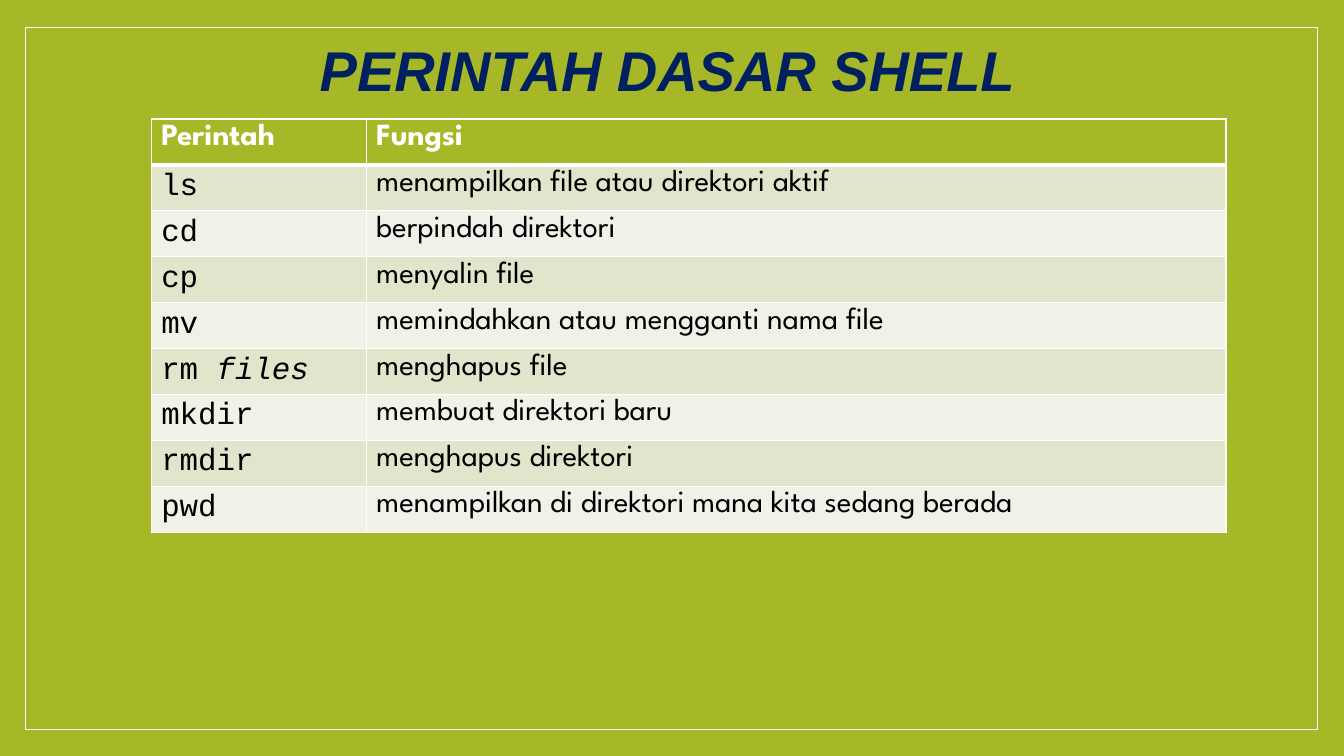
"""Build a slide that lists basic shell commands in a table."""
from dataclasses import dataclass

from lxml import etree
from pptx import Presentation
from pptx.dml.color import RGBColor
from pptx.enum.shapes import MSO_SHAPE
from pptx.enum.text import MSO_ANCHOR, MSO_AUTO_SIZE, PP_ALIGN
from pptx.oxml.ns import qn
from pptx.slide import Slide
from pptx.table import _Cell
from pptx.text.text import _Paragraph
from pptx.util import Inches, Pt

RECTANGLE = MSO_SHAPE.RECTANGLE
BOTTOM = MSO_ANCHOR.BOTTOM
NO_AUTOFIT = MSO_AUTO_SIZE.NONE
CENTER = PP_ALIGN.CENTER
SLIDE_WIDTH = Inches(13.33)
SLIDE_HEIGHT = Inches(7.5)
TITLE_ONLY_LAYOUT = 5


@dataclass(frozen=True)
class Theme:
    """Colours, fonts and sizes of the slide."""

    green: str = "A6B727"
    white: str = "FFFFFF"
    navy: str = "002060"
    black: str = "000000"
    bands: tuple[str, str] = ("E0E5CC", "F0F2E7")
    title_font: str = "Arial"
    text_font: str = "League Spartan"
    code_font: str = "Courier New"
    title_size: float = 40
    table_size: float = 22
    thin_line: float = 0.96
    thick_line: float = 3


@dataclass(frozen=True)
class Area:
    """A rectangle in percent of the slide's width and height."""

    left: float
    top: float
    width: float
    height: float

    def lengths(self) -> tuple[int, int, int, int]:
        """Return left, top, width and height in slide units."""
        return (
            int(SLIDE_WIDTH * self.left / 100),
            int(SLIDE_HEIGHT * self.top / 100),
            int(SLIDE_WIDTH * self.width / 100),
            int(SLIDE_HEIGHT * self.height / 100),
        )


@dataclass(frozen=True)
class Command:
    """A shell command, what it does and its optional argument."""

    name: str
    purpose: str
    argument: str = ""


THEME = Theme()
FRAME_AREA = Area(1.88, 3.6, 96.17, 92.93)
TITLE_AREA = Area(12.15, 2, 75.02, 12.27)
TABLE_AREA = Area(11.25, 15.73, 79.97, 54.67)
COLUMN_SHARES = (0.2, 0.8)
HEADINGS = ("Perintah", "Fungsi")
COMMANDS = (
    Command("ls", "menampilkan file atau direktori aktif"),
    Command("cd", "berpindah direktori"),
    Command("cp", "menyalin file"),
    Command("mv", "memindahkan atau mengganti nama file"),
    Command("rm ", "menghapus file", "files"),
    Command("mkdir", "membuat direktori baru"),
    Command("rmdir", "menghapus direktori"),
    Command("pwd", "menampilkan di direktori mana kita sedang berada"),
)


def add_text(paragraph: _Paragraph, text: str, *, font: str = THEME.text_font,
             size: float = THEME.table_size, color: str = THEME.black,
             bold: bool = False, italic: bool = False) -> None:
    """Append a formatted run to a paragraph."""
    run = paragraph.add_run()
    run.text = text
    run.font.name = font
    run.font.size = Pt(size)
    run.font.bold = bold
    run.font.italic = italic
    run.font.color.rgb = RGBColor.from_string(color)


def style_cell(cell: _Cell, fill: str, top: float, bottom: float) -> None:
    """Give a cell its white borders and its fill."""
    properties = cell._tc.get_or_add_tcPr()
    widths = {"lnL": THEME.thin_line, "lnR": THEME.thin_line, "lnT": top, "lnB": bottom}
    for side, width in widths.items():
        border = etree.SubElement(properties, qn(f"a:{side}"), w=str(int(Pt(width))))
        solid = etree.SubElement(border, qn("a:solidFill"))
        etree.SubElement(solid, qn("a:srgbClr"), val=THEME.white)
    cell.fill.solid()
    cell.fill.fore_color.rgb = RGBColor.from_string(fill)


def add_frame(slide: Slide) -> None:
    """Colour the background and draw the white frame."""
    green = RGBColor.from_string(THEME.green)
    slide.background.fill.solid()
    slide.background.fill.fore_color.rgb = green
    frame = slide.shapes.add_shape(RECTANGLE, *FRAME_AREA.lengths())
    frame.shadow.inherit = False
    frame.fill.solid()
    frame.fill.fore_color.rgb = green
    frame.line.color.rgb = RGBColor.from_string(THEME.white)
    frame.line.width = Pt(1)


def add_command_table(slide: Slide) -> None:
    """Draw the table of commands and their purposes."""
    left, top, width, height = TABLE_AREA.lengths()
    table = slide.shapes.add_table(
        len(COMMANDS) + 1, len(HEADINGS), left, top, width, height).table
    for column, share in zip(table.columns, COLUMN_SHARES):
        column.width = int(width * share)

    for cell, heading in zip(table.rows[0].cells, HEADINGS):
        style_cell(cell, THEME.green, THEME.thin_line, THEME.thick_line)
        add_text(cell.text_frame.paragraphs[0], heading, color=THEME.white, bold=True)

    for index, command in enumerate(COMMANDS):
        name_cell, purpose_cell = table.rows[index + 1].cells
        line_above = THEME.thin_line if index else THEME.thick_line
        for cell in (name_cell, purpose_cell):
            style_cell(cell, THEME.bands[index % 2], line_above, THEME.thin_line)
        name = name_cell.text_frame.paragraphs[0]
        add_text(name, command.name, font=THEME.code_font)
        if command.argument:
            add_text(name, command.argument, font=THEME.code_font, italic=True)
        add_text(purpose_cell.text_frame.paragraphs[0], command.purpose)


def fill_title(slide: Slide, text: str) -> None:
    """Place and format the title placeholder."""
    title = slide.shapes.title
    title.left, title.top, title.width, title.height = TITLE_AREA.lengths()
    title.text_frame.auto_size = NO_AUTOFIT
    title.text_frame.vertical_anchor = BOTTOM
    paragraph = title.text_frame.paragraphs[0]
    paragraph.alignment = CENTER
    paragraph.line_spacing = 0.85
    add_text(paragraph, text, font=THEME.title_font, size=THEME.title_size,
             color=THEME.navy, bold=True, italic=True)
    slide.shapes._spTree.append(title._element)


def main() -> None:
    """Build and save the presentation."""
    presentation = Presentation()
    presentation.slide_width = SLIDE_WIDTH
    presentation.slide_height = SLIDE_HEIGHT
    slide = presentation.slides.add_slide(presentation.slide_layouts[TITLE_ONLY_LAYOUT])
    add_frame(slide)
    add_command_table(slide)
    fill_title(slide, "PERINTAH DASAR SHELL")
    presentation.save("out.pptx")


if __name__ == "__main__":
    main()
